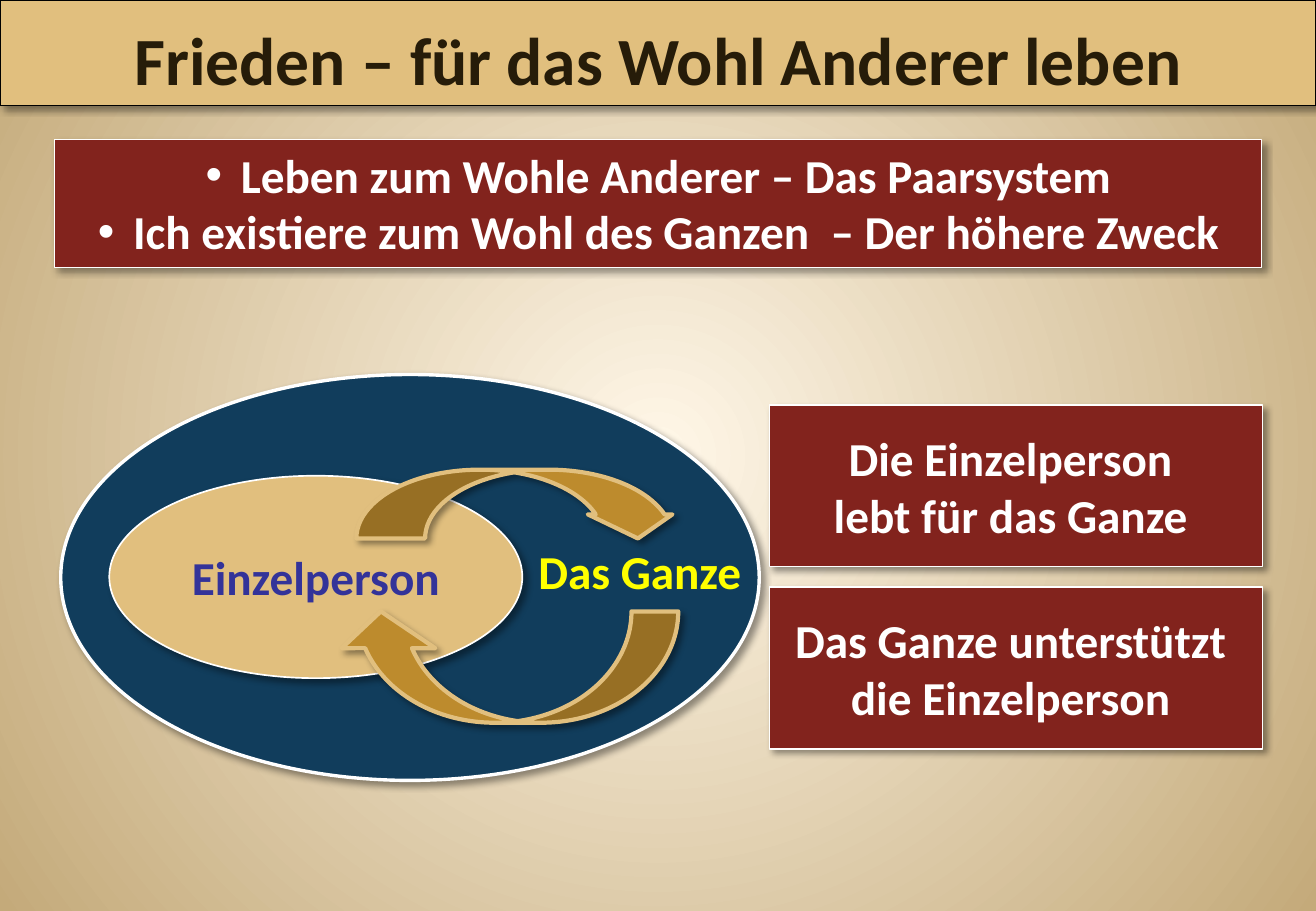
from lxml import etree
from pptx import Presentation
from pptx import util as u
from pptx.dml.color import RGBColor
from pptx.enum import shapes, text
from pptx.oxml import parse_xml
from pptx.oxml.ns import nsdecls, qn

PX = 7620
SLIDE = (0, 0, 1300, 900)
SAND, WINE, NAVY, GOLD, WHITE = "E1BF7E", "82231D", "113D5C", "BD8B2D", "FFFFFF"
KINDS = shapes.MSO_SHAPE
ANCHOR = text.MSO_ANCHOR
CENTER = text.PP_ALIGN.CENTER


def colour(value):
    return RGBColor.from_string(value)


def apply(target, formats):
    for name, value in formats.items():
        setattr(target, name, value)


def within(box, left, top, width, height):
    return box[0] + left, box[1] + top, width, height


def place(part, box):
    apply(part, dict(zip(("left", "top", "width", "height"), (n * PX for n in box))))


def paint(part, fill, line, weight):
    part.fill.solid()
    part.fill.fore_color.rgb = colour(fill)
    part.line.color.rgb = colour(line)
    part.line.width = u.Pt(weight)
    part.shadow.inherit = False
    effects = part._element.spPr.find(qn("a:effectLst"))
    effects.append(parse_xml(
        f'<a:outerShdw {nsdecls("a")} blurRad="50800" dist="38100" dir="2700000" '
        'algn="tl" rotWithShape="0"><a:srgbClr val="000000">'
        '<a:alpha val="40000"/></a:srgbClr></a:outerShdw>'))


def write(part, lines, ink=WHITE, size=28, align=CENTER, **frame):
    words = part.text_frame
    words.text = "\n".join(lines)
    apply(words, {"auto_size": text.MSO_AUTO_SIZE.NONE, "word_wrap": False,
                  "vertical_anchor": ANCHOR.MIDDLE, **frame})
    for paragraph in words.paragraphs:
        apply(paragraph, {"alignment": align, "space_before": u.Pt(0)})
        font = paragraph.runs[0].font
        apply(font, {"name": "Calibri", "size": u.Pt(size), "bold": True})
        font.color.rgb = colour(ink)


def add_part(slide, kind, box, fill, line, weight, adjust=(), rotation=0):
    part = slide.shapes.add_shape(kind, *(n * PX for n in box))
    paint(part, fill, line, weight)
    part.rotation = rotation
    for index, value in enumerate(adjust):
        part.adjustments[index] = value
    return part


def backdrop(slide):
    fill = slide.background.fill
    fill.gradient()
    for stop, (tone, position) in zip(fill.gradient_stops, (("FFF7E8", 0), ("C4AA7A", 1))):
        stop.color.rgb = colour(tone)
        stop.position = position
    gradient = slide._element.cSld.find(".//" + qn("a:gradFill"))
    gradient.remove(gradient.find(qn("a:lin")))
    circle = etree.SubElement(gradient, qn("a:path"), path="circle")
    etree.SubElement(circle, qn("a:fillToRect"), dict.fromkeys("ltrb", "50000"))


def heading(slide, box):
    title = slide.shapes.title
    place(title, box)
    paint(title, SAND, "000000", 0.75)
    write(title, ["Frieden – für das Wohl Anderer leben"], "261C09", 40,
          word_wrap=True, vertical_anchor=ANCHOR.BOTTOM)


def principles(slide, box):
    body = slide.placeholders[1]
    place(body, box)
    paint(body, WINE, WHITE, 0.75)
    write(body, ["Leben zum Wohle Anderer – Das Paarsystem",
                 "Ich existiere zum Wohl des Ganzen  – Der höhere Zweck"],
          word_wrap=True, vertical_anchor=ANCHOR.TOP)
    for paragraph in body.text_frame.paragraphs:
        layout = paragraph._p.get_or_add_pPr()
        layout.set("marL", str(35 * PX))
        layout.set("indent", str(-35 * PX))
        etree.SubElement(layout, qn("a:buFont"), typeface="Arial")
        etree.SubElement(layout, qn("a:buChar"), char="•")


def exchange(slide, box):
    add_part(slide, KINDS.OVAL, box, NAVY, WHITE, 2)
    individual = add_part(slide, KINDS.OVAL, within(box, 48, 100, 408, 200), SAND, WHITE, 1)
    write(individual, ["Einzelperson"], "333399")
    for spot, adjust, rotation in (((292, 94, 320, 68), (1.0, 1.23, 0.35), 0),
                                   ((270, 234, 340, 110), (0.42, 0.84, 0.33), 180)):
        add_part(slide, KINDS.CURVED_DOWN_ARROW, within(box, *spot), GOLD, SAND, 2.5,
                 adjust, rotation)
    whole = slide.shapes.add_textbox(*(n * PX for n in within(box, 460, 160, 228, 68)))
    write(whole, ["Das Ganze"], "FFFF00", align=text.PP_ALIGN.LEFT,
          vertical_anchor=ANCHOR.TOP)


def statements(slide, box):
    height, gap = 160, 20
    pairs = (("Die Einzelperson ", "lebt für das Ganze "),
             ("Das Ganze unterstützt ", "die Einzelperson "))
    for row, lines in enumerate(pairs):
        spot = within(box, 0, row * (height + gap), box[2], height)
        statement = add_part(slide, KINDS.ROUNDED_RECTANGLE, spot, WINE, WHITE, 0.75, (0,))
        write(statement, lines)


def main():
    deck = Presentation()
    apply(deck, {"slide_width": SLIDE[2] * PX, "slide_height": SLIDE[3] * PX})
    slide = deck.slides.add_slide(deck.slide_layouts[1])
    backdrop(slide)
    heading(slide, within(SLIDE, 0, 0, 1300, 104))
    principles(slide, within(SLIDE, 54, 138, 1192, 126))
    exchange(slide, within(SLIDE, 60, 370, 690, 401))
    statements(slide, within(SLIDE, 760, 400, 487, 340))
    deck.save("out.pptx")


if __name__ == "__main__":
    main()
